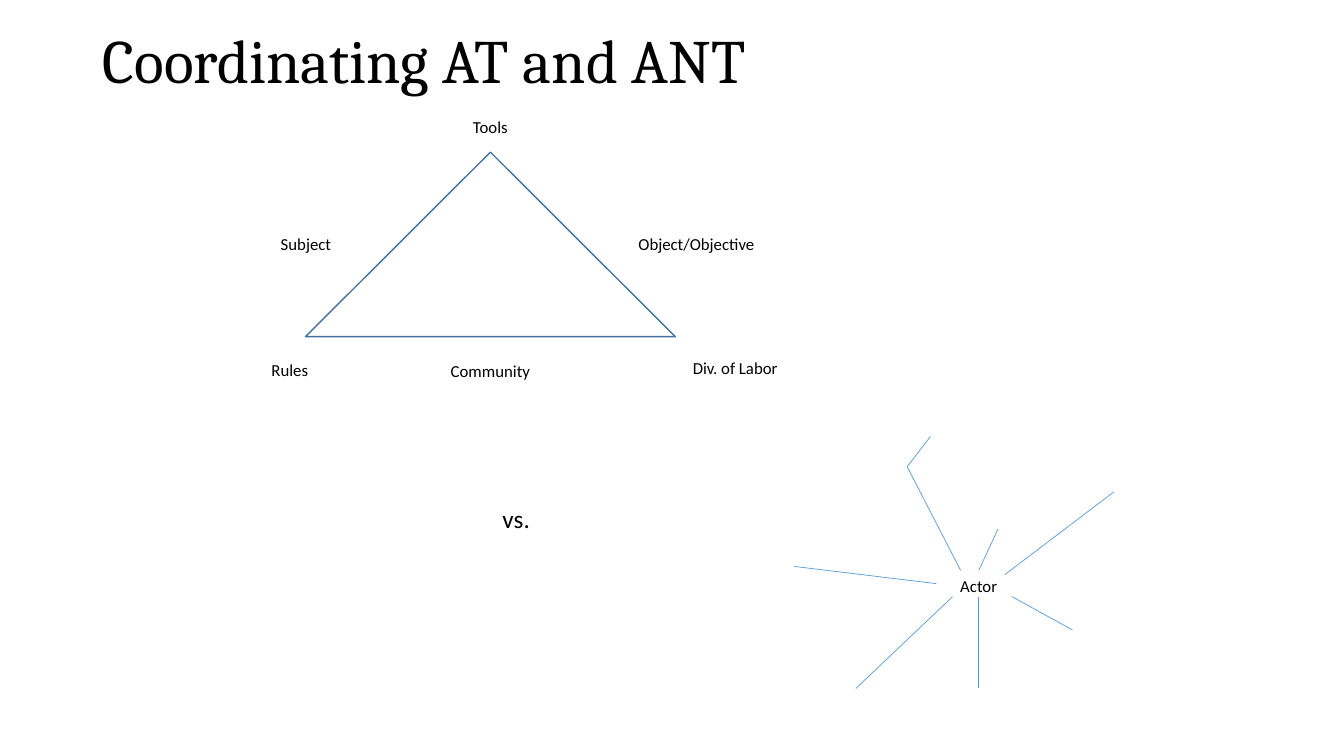
from dataclasses import dataclass

from lxml.etree import SubElement
from pptx import Presentation
from pptx.dml.color import RGBColor
from pptx.enum.shapes import MSO_CONNECTOR as Connector, MSO_SHAPE as Preset
from pptx.enum.text import MSO_ANCHOR as Anchor, PP_ALIGN as Align
from pptx.oxml.ns import qn
from pptx.util import Pt


@dataclass(frozen=True)
class Theme:
    text: RGBColor = RGBColor.from_string("000000")
    background: RGBColor = RGBColor.from_string("FFFFFF")
    triangle: RGBColor = RGBColor.from_string("43739E")
    ray: RGBColor = RGBColor.from_string("5B9BD5")
    heading_font: str = "Cambria"
    body_font: str = "Calibri"
    title_size: float = 44
    versus_size: float = 18
    label_size: float = 12
    triangle_width: float = 1
    ray_width: float = 0.5


@dataclass(frozen=True)
class Box:
    left: float
    top: float
    width: float
    height: float


THEME = Theme()
LABEL_HEIGHT = 21.6


def add_text(shapes, box, text, size, font=THEME.body_font, align=Align.CENTER):
    shape = shapes.add_textbox(Pt(box.left), Pt(box.top), Pt(box.width), Pt(box.height))
    frame = shape.text_frame
    frame.word_wrap = True
    paragraph = frame.paragraphs[0]
    paragraph.text = text
    paragraph.alignment = align
    paragraph.font.name = font
    paragraph.font.size = Pt(size)
    paragraph.font.color.rgb = THEME.text
    return frame


def add_label(shapes, center, top, width, text):
    box = Box(center - width / 2, top, width, LABEL_HEIGHT)
    add_text(shapes, box, text, THEME.label_size)


def add_ray(shapes, box, start, end):
    ray = shapes.add_connector(
        Connector.STRAIGHT,
        Pt(box.left + start[0]), Pt(box.top + start[1]),
        Pt(box.left + end[0]), Pt(box.top + end[1]),
    )
    ray.line.color.rgb = THEME.ray
    ray.line.width = Pt(THEME.ray_width)
    SubElement(ray._element.spPr, qn("a:effectLst"))


def add_title(slide, box):
    frame = add_text(slide.shapes, box, "Coordinating AT and ANT",
                     THEME.title_size, THEME.heading_font, Align.LEFT)
    frame.vertical_anchor = Anchor.MIDDLE
    frame.paragraphs[0].line_spacing = 0.9


def add_activity_triangle(slide, box):
    shapes = slide.shapes.add_group_shape().shapes
    triangle = shapes.add_shape(Preset.ISOSCELES_TRIANGLE, Pt(box.left), Pt(box.top),
                                Pt(box.width), Pt(box.height))
    triangle.shadow.inherit = False
    triangle.fill.background()
    triangle.line.color.rgb = THEME.triangle
    triangle.line.width = Pt(THEME.triangle_width)

    middle = box.width / 2
    labels = [
        ("Tools", middle, -28.8, 75),
        ("Community", middle, 145.5, 85.7),
        ("Rules", -11.2, 144.7, 85.7),
        ("Div. of Labor", 307, 143.3, 85.7),
        ("Subject", 0.3, 54.7, 85.7),
        ("Object/Objective", 279.3, 54.7, 115.2),
    ]
    for text, center, top, width in labels:
        add_label(shapes, box.left + center, box.top + top, width, text)


def add_actor_network(slide, box):
    shapes = slide.shapes.add_group_shape().shapes
    actor_center, actor_top, actor_bottom = 131.7, 95.7, 114.4
    bend = (80.6, 21.6)
    rays = [
        ((118.8, actor_top), bend),
        ((97.2, 0), bend),
        ((113, actor_bottom), (43.9, box.height)),
        ((box.width, 39.6), (150.4, 98.6)),
        ((101.5, 105.1), (0, 92.8)),
        ((145.4, 66.2), (actor_center, actor_top)),
        ((actor_center, actor_bottom), (actor_center, box.height)),
        ((198.7, 138.2), (155.5, actor_bottom)),
    ]
    add_label(shapes, box.left + actor_center, box.top + actor_top, 60, "Actor")
    for start, end in rays:
        add_ray(shapes, box, start, end)


def main():
    presentation = Presentation()
    presentation.slide_width = Pt(960)
    presentation.slide_height = Pt(540)
    slide = presentation.slides.add_slide(presentation.slide_layouts[6])
    slide.background.fill.solid()
    slide.background.fill.fore_color.rgb = THEME.background

    add_activity_triangle(slide, Box(218.2, 108.7, 264.2, 131.8))
    add_text(slide.shapes, Box(329.8, 355.7, 77.8, 28.8), "vs.", THEME.versus_size)
    add_actor_network(slide, Box(567.4, 311.8, 228.2, 180))
    add_title(slide, Box(66.2, 13.7, 828, 63.4))
    presentation.save("out.pptx")


if __name__ == "__main__":
    main()
